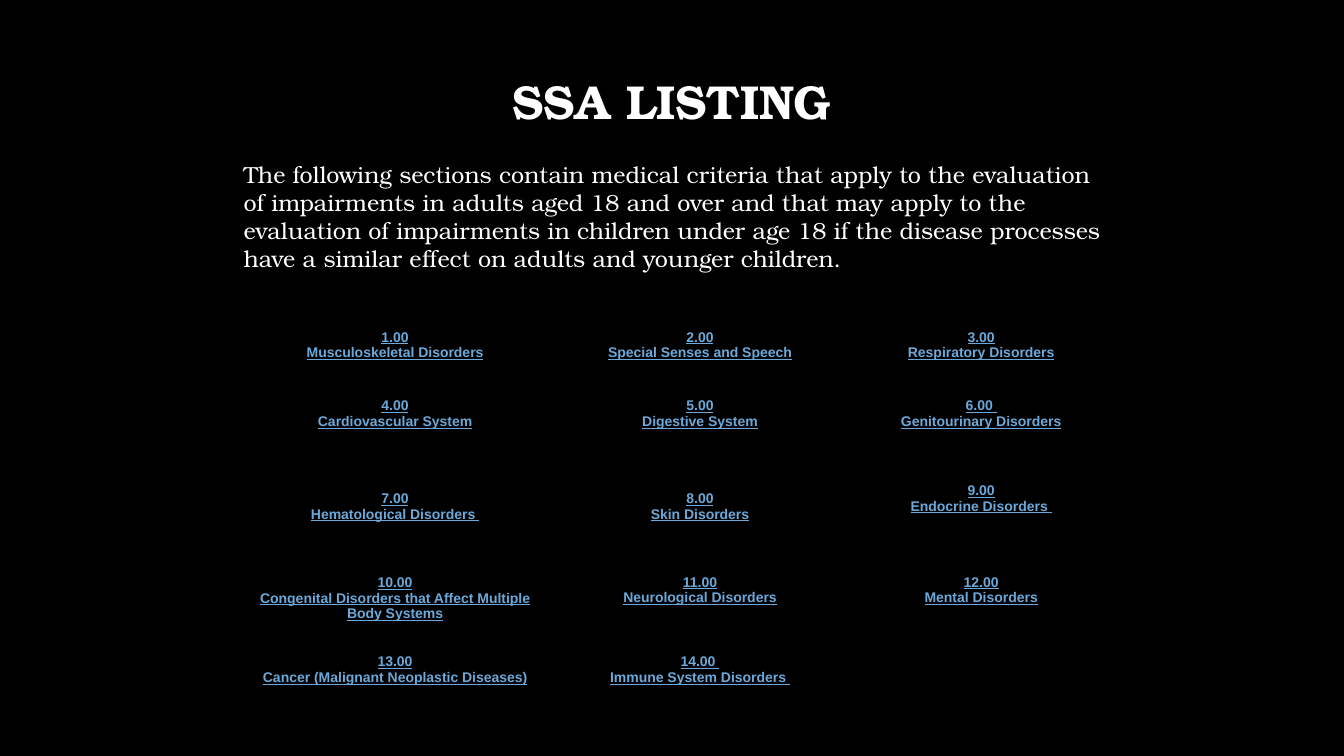
from pptx import Presentation
from pptx.dml.color import RGBColor
from pptx.enum.text import MSO_ANCHOR, PP_ALIGN
from pptx.util import Cm, Pt

COLORS = {"back": "000000", "text": "FFFFFF", "link": "6BA9DA"}
TITLE = "SSA LISTING"
INTRO = (
    "The following sections contain medical criteria that apply to the evaluation "
    "of impairments in adults aged 18 and over and that may apply to the evaluation "
    "of impairments in children under age 18 if the disease processes have a similar "
    "effect on adults and younger children."
)
LISTINGS = [
    [("1.00", "Musculoskeletal Disorders"), ("2.00", "Special Senses and Speech"),
     ("3.00", "Respiratory Disorders")],
    [("4.00", "Cardiovascular System"), ("5.00", "Digestive System"),
     ("6.00 ", "Genitourinary Disorders")],
    [("7.00", "Hematological Disorders "), ("8.00", "Skin Disorders"),
     ("9.00", "Endocrine Disorders ")],
    [("10.00", "Congenital Disorders that Affect Multiple Body Systems"),
     ("11.00", "Neurological Disorders"), ("12.00", "Mental Disorders")],
    [("13.00", "Cancer (Malignant Neoplastic Diseases)"),
     ("14.00 ", "Immune System Disorders "), ()],
]
RAISED = {(1, 0), (1, 1), (1, 2), (2, 2), (3, 1), (3, 2), (4, 0), (4, 1)}
COL_WIDTHS = [8.03, 7.34, 6.83]
ROW_HEIGHTS = [1.9, 1.96, 2.31, 2.31, 1.7]
INSET, LIFT = 0.18, 0.4
PLAIN_TABLE = "{2D5ABB26-0587-4C30-8999-92F81FD0307C}"

FORMATS = {
    "title": {"name": "TeX Gyre Bonum", "size": Pt(34), "bold": True},
    "intro": {"name": "TeX Gyre Bonum", "size": Pt(16.6)},
    "link": {"name": "Arial", "size": Pt(10), "bold": True, "underline": True},
}


def write(p, text, style, color, **layout):
    r = p.add_run()
    r.text = text
    for key, value in FORMATS[style].items():
        setattr(r.font, key, value)
    r.font.color.rgb = RGBColor.from_string(COLORS[color])
    for key, value in layout.items():
        setattr(p, key, value)


def add_text(s, box, anchor, text, style, **layout):
    tf = s.shapes.add_textbox(*map(Cm, box)).text_frame
    tf.word_wrap = True
    tf.vertical_anchor = anchor
    write(tf.paragraphs[0], text, style, "text", **layout)


def add_listings(s):
    shape = s.shapes.add_table(
        len(ROW_HEIGHTS), len(COL_WIDTHS), Cm(5.94), Cm(7.75),
        Cm(sum(COL_WIDTHS)), Cm(sum(ROW_HEIGHTS)))
    tb = shape.table
    tb.first_row = tb.horz_banding = False
    tb._tbl.tblPr[0].text = PLAIN_TABLE
    for col, width in zip(tb.columns, COL_WIDTHS):
        col.width = Cm(width)
    for row, height in zip(tb.rows, ROW_HEIGHTS):
        row.height = Cm(height)
    for i, row in enumerate(LISTINGS):
        for j, lines in enumerate(row):
            cell = tb.cell(i, j)
            cell.fill.background()
            cell.vertical_anchor = MSO_ANCHOR.MIDDLE
            for side in ("left", "right", "top", "bottom"):
                setattr(cell, f"margin_{side}", Cm(INSET))
            if (i, j) in RAISED:
                cell.margin_bottom = Cm(INSET + LIFT)
            tf = cell.text_frame
            for k, line in enumerate(lines):
                p = tf.add_paragraph() if k else tf.paragraphs[0]
                write(p, line, "link", "link", alignment=PP_ALIGN.CENTER)


def main():
    prs = Presentation()
    prs.slide_width, prs.slide_height = Cm(33.87), Cm(19.05)
    s = prs.slides.add_slide(prs.slide_layouts[6])
    fill = s.background.fill
    fill.solid()
    fill.fore_color.rgb = RGBColor.from_string(COLORS["back"])
    add_text(s, (6.15, 1.7, 21.56, 1.83), MSO_ANCHOR.MIDDLE, TITLE, "title",
             alignment=PP_ALIGN.CENTER, line_spacing=0.9)
    add_text(s, (5.89, 3.91, 22.15, 3.63), MSO_ANCHOR.TOP, INTRO, "intro",
             alignment=PP_ALIGN.LEFT, space_after=Pt(6))
    add_listings(s)
    prs.save("out.pptx")


if __name__ == "__main__":
    main()
